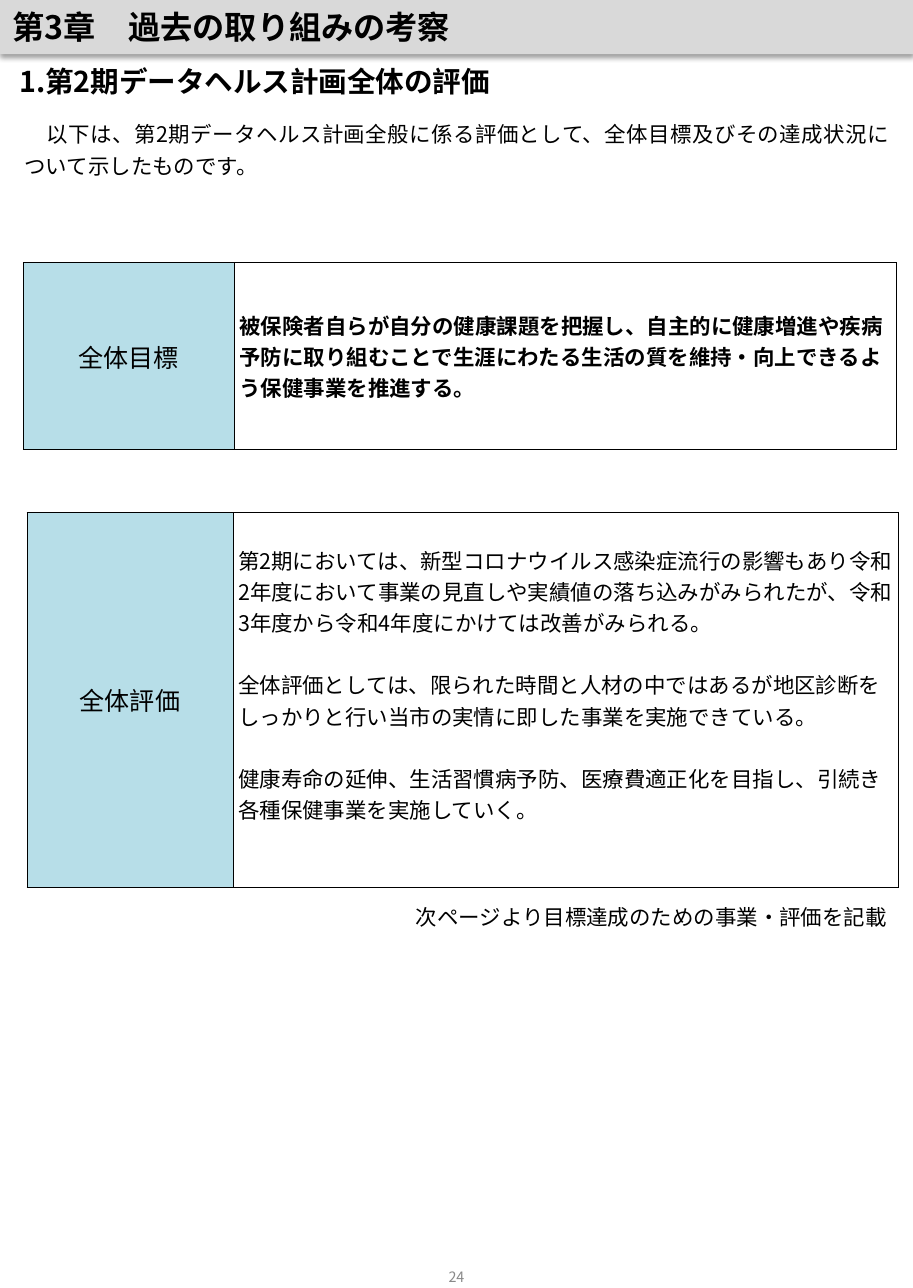
from lxml.etree import SubElement
from pptx import Presentation
from pptx.dml.color import RGBColor
from pptx.enum.shapes import MSO_SHAPE as Shape
from pptx.enum.text import MSO_ANCHOR as Anchor, PP_ALIGN as Align
from pptx.oxml.ns import qn
from pptx.util import Inches, Pt

FONT = "Noto Sans CJK JP"
COLORS = {"text": "000000", "banner": "D9D9D9", "label": "B7DEE8",
          "border": "000000", "shadow": "000000", "page": "898989"}

CHAPTER = "第3章　過去の取り組みの考察"
# text, box (left, top, width, height), font values, paragraph values
TEXTS = [
    ("　以下は、第2期データヘルス計画全般に係る評価として、全体目標及びその達成状況について示したものです。",
     (0.19, 0.84, 6.82, 0.57), {"size": Pt(12)},
     {"alignment": Align.JUSTIFY, "line_spacing": 1.25}),
    ("1.第2期データヘルス計画全体の評価",
     (0.15, 0.45, 6.71, 0.37), {"size": Pt(16), "bold": True}, {}),
    ("次ページより目標達成のための事業・評価を記載",
     (3.23, 6.97, 3.86, 0.3), {"size": Pt(12)}, {}),
]
PAGE_NUMBER = "24"
PAGE_BOX = (2.72, 9.65, 1.65, 0.53)

TABLES = [
    {"label": "全体目標", "at": (0.18, 2.04), "columns": (1.64, 5.14), "height": 1.45,
     "bold": True, "bottom": 0.02,
     "body": ["被保険者自らが自分の健康課題を把握し、自主的に健康増進や疾病予防に取り組むことで"
              "生涯にわたる生活の質を維持・向上できるよう保健事業を推進する。"]},
    {"label": "全体評価", "at": (0.21, 3.98), "columns": (1.6, 5.17), "height": 2.91,
     "bold": False, "bottom": 0.26,
     "body": ["第2期においては、新型コロナウイルス感染症流行の影響もあり令和2年度において事業の"
              "見直しや実績値の落ち込みがみられたが、令和3年度から令和4年度にかけては改善がみられる。",
              "全体評価としては、限られた時間と人材の中ではあるが地区診断をしっかりと行い"
              "当市の実情に即した事業を実施できている。",
              "健康寿命の延伸、生活習慣病予防、医療費適正化を目指し、引続き"
              "各種保健事業を実施していく。"]},
]
BODY_GAP = Pt(17.4)


def rgb(name):
    return RGBColor.from_string(COLORS[name])


def apply(target, values):
    for name, value in values.items():
        setattr(target, name, value)


def write(frame, paragraphs, font, layout, color="text"):
    for i, content in enumerate(paragraphs):
        paragraph = frame.add_paragraph() if i else frame.paragraphs[0]
        apply(paragraph, layout)
        if i:
            paragraph.space_before = BODY_GAP
        run = paragraph.add_run()
        run.text = content
        apply(run.font, {"name": FONT, **font})
        run.font.color.rgb = rgb(color)
        SubElement(run.font._element, qn("a:ea"), typeface=FONT)


def add_text(slide, content, box, font, layout, color="text", **frame_values):
    frame = slide.shapes.add_textbox(*map(Inches, box)).text_frame
    apply(frame, {"word_wrap": True, **frame_values})
    write(frame, [content], font, layout, color)


def add_banner(slide):
    banner = slide.shapes.add_shape(
        Shape.RECTANGLE, *map(Inches, (0, -0.01, 7.09, 0.43)))
    banner.fill.solid()
    banner.fill.fore_color.rgb = rgb("banner")
    banner.line.fill.background()
    banner.shadow.inherit = False
    effects = banner._element.spPr.find(qn("a:effectLst"))
    shadow = SubElement(effects, qn("a:outerShdw"), blurRad=str(Pt(3.1)),
                        dist=str(Pt(1.6)), dir="5400000", rotWithShape="0")
    shade = SubElement(shadow, qn("a:srgbClr"), val=COLORS["shadow"])
    SubElement(shade, qn("a:alpha"), val="38000")
    banner.text_frame.vertical_anchor = Anchor.MIDDLE
    write(banner.text_frame, [CHAPTER], {"size": Pt(18), "bold": True},
          {"alignment": Align.LEFT})


def add_borders(cell):
    properties = cell._tc.get_or_add_tcPr()
    for i, side in enumerate(("a:lnL", "a:lnR", "a:lnT", "a:lnB")):
        line = properties.makeelement(qn(side), {"w": str(Pt(0.5))})
        fill = SubElement(line, qn("a:solidFill"))
        SubElement(fill, qn("a:srgbClr"), val=COLORS["border"])
        properties.insert(i, line)


def add_labelled_table(slide, entry):
    size = (sum(entry["columns"]), entry["height"])
    table = slide.shapes.add_table(1, 2, *map(Inches, entry["at"] + size)).table
    apply(table, {"first_row": False, "horz_banding": False})
    for column, width in zip(table.columns, entry["columns"]):
        column.width = Inches(width)
    label, body = table.rows[0].cells
    for cell in (label, body):
        apply(cell, {"vertical_anchor": Anchor.MIDDLE,
                     "margin_left": Inches(0.04), "margin_right": Inches(0.04),
                     "margin_top": Inches(0.02), "margin_bottom": Inches(0.02)})
        add_borders(cell)
    label.fill.solid()
    label.fill.fore_color.rgb = rgb("label")
    body.fill.background()
    body.margin_bottom = Inches(entry["bottom"])
    write(label.text_frame, [entry["label"]], {"size": Pt(14), "bold": False},
          {"alignment": Align.CENTER})
    write(body.text_frame, entry["body"],
          {"size": Pt(12), "bold": entry["bold"]}, {})


def main():
    deck = Presentation()
    deck.slide_width, deck.slide_height = Inches(7.09), Inches(10)
    slide = deck.slides.add_slide(deck.slide_layouts[6])
    add_banner(slide)
    for content, box, font, layout in TEXTS:
        add_text(slide, content, box, font, layout, margin_left=0)
    add_text(slide, PAGE_NUMBER, PAGE_BOX, {"size": Pt(8)},
             {"alignment": Align.CENTER}, "page", vertical_anchor=Anchor.MIDDLE)
    for entry in TABLES:
        add_labelled_table(slide, entry)
    deck.save("out.pptx")


if __name__ == "__main__":
    main()
